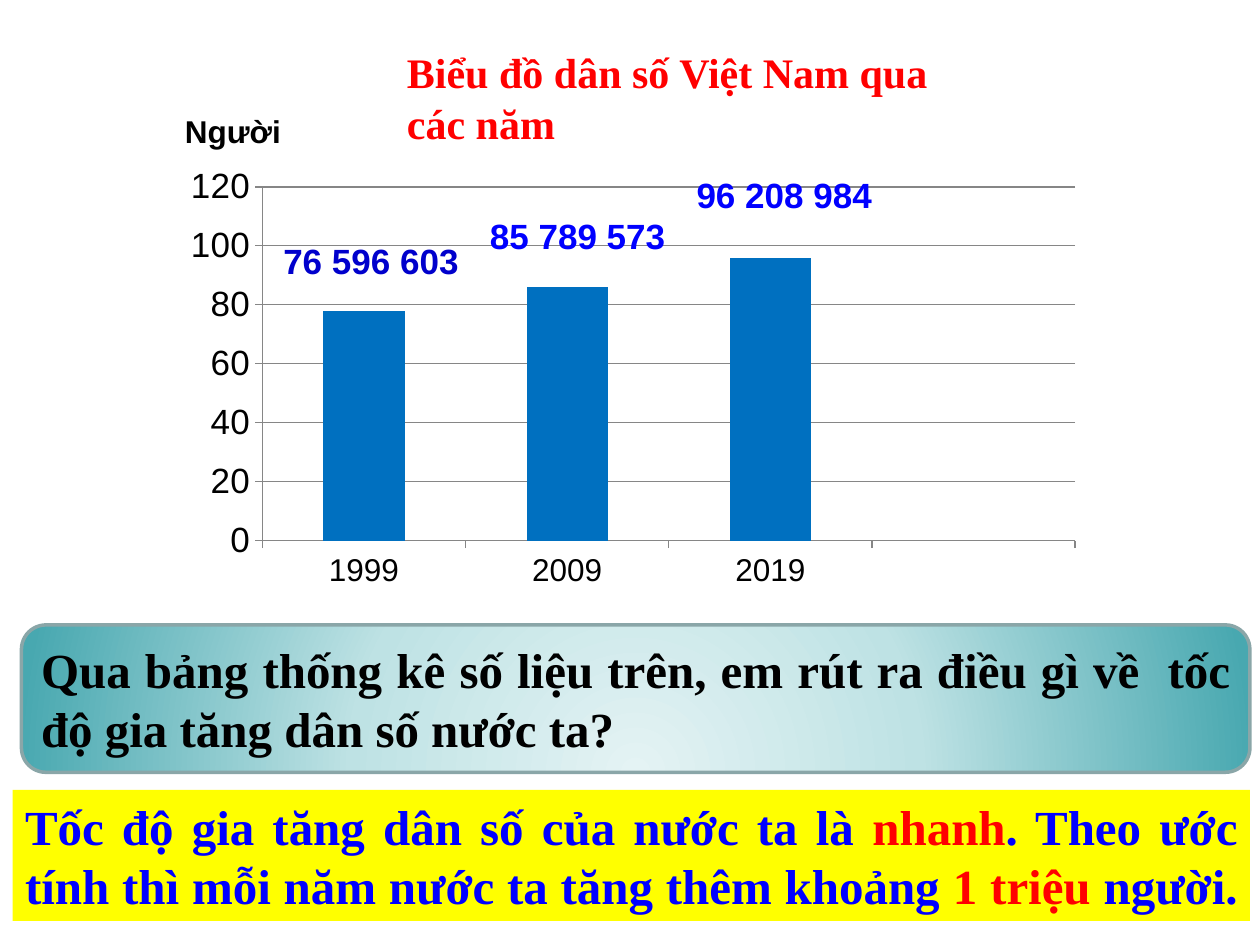
import pptx
import pptx.chart.data
import pptx.dml.color
import pptx.enum.chart
import pptx.enum.shapes
import pptx.enum.text
import pptx.oxml
import pptx.util
from pptx.util import Inches

BLUE, RED, BLACK, GRAY = "0000FF", "FF0000", "000000", "868686"
SERIF, SANS = "Times New Roman", "Arial"
ALIGN = pptx.enum.text.PP_ALIGN
ANCHOR = pptx.enum.text.MSO_ANCHOR
SHAPE = pptx.enum.shapes.MSO_SHAPE
NS = pptx.oxml.ns.nsdecls


def tint(code):
    return pptx.dml.color.RGBColor.from_string(code)


def write(frame, text, size=20, font=SANS, color=BLUE, align=ALIGN.LEFT, accents=()):
    para = frame.paragraphs[0]
    para.alignment = align
    parts = [text] if isinstance(text, str) else text
    for part in parts:
        run = para.add_run()
        run.text = part
        run.font.name = font
        run.font.size = pptx.util.Pt(size)
        run.font.bold = True
        run.font.color.rgb = tint(RED if part in accents else color)


deck = pptx.Presentation()
deck.slide_width, deck.slide_height = Inches(10), Inches(7.5)
slide = deck.slides.add_slide(deck.slide_layouts[5])
shapes = slide.shapes

ask = shapes.add_shape(SHAPE.ROUNDED_RECTANGLE, Inches(0.17), Inches(4.96), Inches(9.75), Inches(1.17))
ask.shadow.inherit = False
ask.line.color.rgb = tint("8AA6A8")
ask.line.width = pptx.util.Pt(2)
stops = "".join(
    f'<a:gs pos="{spot * 1000}"><a:srgbClr val="{code}"/></a:gs>'
    for spot, code in [(0, "E4F3F4"), (46, "BEE2E4"), (100, "48A8B0")]
)
fade = pptx.oxml.parse_xml(
    f'<a:gradFill {NS("a")} rotWithShape="1"><a:gsLst>{stops}</a:gsLst><a:path path="circle">'
    '<a:fillToRect l="50000" t="130000" r="50000" b="-30000"/></a:path></a:gradFill>'
)
ask.element.spPr.find(pptx.oxml.ns.qn("a:prstGeom")).addnext(fade)
ask.text_frame.vertical_anchor = ANCHOR.MIDDLE
write(
    ask.text_frame,
    "Qua bảng thống kê số liệu trên, em rút ra điều gì về  tốc độ gia tăng dân số nước ta?",
    size=28, font=SERIF, color=BLACK, align=ALIGN.JUSTIFY,
)

reply = shapes.add_shape(SHAPE.RECTANGLE, Inches(0.1), Inches(6.27), Inches(9.82), Inches(1.04))
reply.shadow.inherit = False
reply.fill.solid()
reply.fill.fore_color.rgb = tint("FFFF00")
reply.line.fill.background()
reply.text_frame.vertical_anchor = ANCHOR.TOP
write(
    reply.text_frame,
    ["Tốc độ gia tăng dân số của nước ta là ", "nhanh",
     ". Theo ước tính thì mỗi năm nước ta tăng thêm khoảng ", "1 triệu ", "người. "],
    size=28, font=SERIF, align=ALIGN.JUSTIFY, accents=("nhanh", "1 triệu "),
)

data = pptx.chart.data.CategoryChartData()
data.categories = ["1999", "2009", "2019", ""]
data.add_series("Series 1", [78, 86, 96, None])
chart = shapes.add_chart(
    pptx.enum.chart.XL_CHART_TYPE.COLUMN_CLUSTERED,
    Inches(1.35), Inches(0.67), Inches(7.33), Inches(4.07), data,
).chart
chart.has_legend = False
chart.font.name = SANS
chart.font.size = pptx.util.Pt(10)
chart.font.color.rgb = tint(BLACK)
write(chart.chart_title.text_frame, "Người ", size=18, color=BLACK, align=ALIGN.CENTER)
chart.chart_title.include_in_layout = False

plot = chart.plots[0]
plot.gap_width = 150
plot.vary_by_categories = False
bars = plot.series[0].format.fill
bars.solid()
bars.fore_color.rgb = tint("0070C0")

years, scale = chart.category_axis, chart.value_axis
scale.minimum_scale, scale.maximum_scale, scale.major_unit = 0, 120, 20
scale.has_major_gridlines = True
for axis, size in [(years, 18), (scale, 20)]:
    axis.major_tick_mark = pptx.enum.chart.XL_TICK_MARK.OUTSIDE
    axis.tick_labels.font.size = pptx.util.Pt(size)
    axis.format.line.color.rgb = tint(GRAY)
scale.major_gridlines.format.line.color.rgb = tint(GRAY)

root = chart.element
places = [
    ("c:title", {"xMode": "edge", "yMode": "edge", "x": 0.01, "y": 0.04}),
    ("c:plotArea", {"layoutTarget": "inner", "xMode": "edge", "yMode": "edge",
                    "x": 0.1, "y": 0.2, "w": 0.88, "h": 0.69}),
]
for tag, rules in places:
    part = root.find(".//" + pptx.oxml.ns.qn(tag))
    old = part.find(pptx.oxml.ns.qn("c:layout"))
    if old is not None:
        part.remove(old)
    marks = "".join(f'<c:{key} val="{val}"/>' for key, val in rules.items())
    part.insert(1 if tag == "c:title" else 0, pptx.oxml.parse_xml(
        f'<c:layout {NS("c")}><c:manualLayout>{marks}</c:manualLayout></c:layout>'))

counts = [
    ("76 596 603", 2.15, 1.85, 1.64, "0000CC"),
    ("85 789 573", 3.79, 1.65, 1.64, BLUE),
    ("96 208 984", 5.43, 1.33, 2.13, BLUE),
]
for text, left, top, width, color in counts:
    box = shapes.add_textbox(Inches(left), Inches(top), Inches(width), Inches(0.44))
    box.text_frame.word_wrap = True
    write(box.text_frame, text, color=color)

title = shapes.title
title.left, title.top, title.width, title.height = Inches(3.13), Inches(0.32), Inches(4.6), Inches(0.5)
title.text_frame.word_wrap = True
title.text_frame.auto_size = pptx.enum.text.MSO_AUTO_SIZE.NONE
title.text_frame.vertical_anchor = ANCHOR.TOP
write(title.text_frame, "Biểu đồ dân số Việt Nam qua các năm", size=24, font=SERIF, color=RED)
title.element.getparent().append(title.element)

deck.save("out.pptx")
